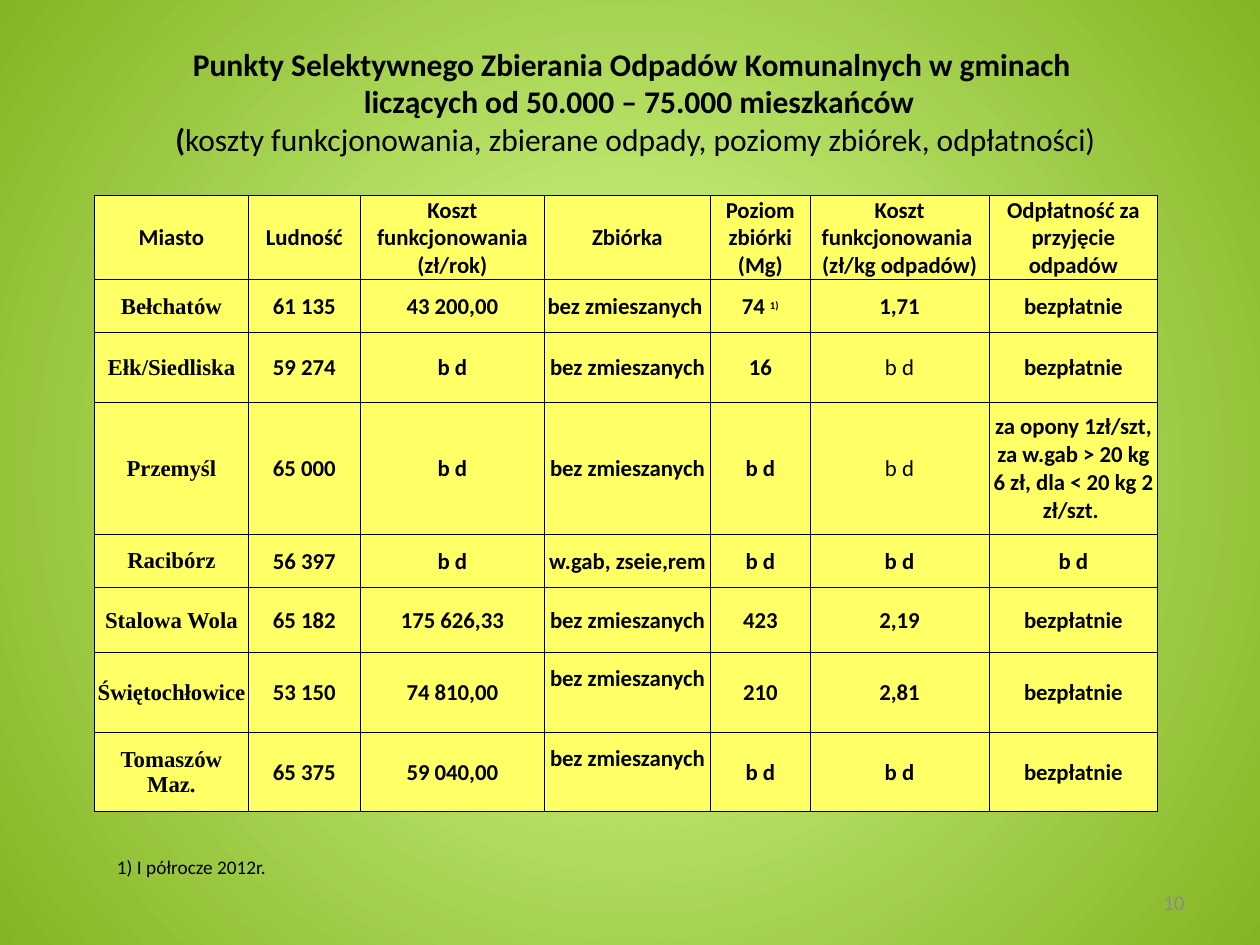
import pptx
import pptx.dml.color
import pptx.enum.text
import pptx.oxml
import pptx.oxml.ns
import pptx.util
from pptx.util import Inches

BLACK = pptx.dml.color.RGBColor(0x00, 0x00, 0x00)
GREY = pptx.dml.color.RGBColor(0x8B, 0x8B, 0x8B)
YELLOW = pptx.dml.color.RGBColor(0xFF, 0xFF, 0x66)
LIGHT_GREEN = pptx.dml.color.RGBColor(0xD9, 0xFF, 0x95)
DARK_GREEN = pptx.dml.color.RGBColor(0x84, 0xB4, 0x23)
ALIGN = pptx.enum.text.PP_ALIGN
MIDDLE = pptx.enum.text.MSO_ANCHOR.MIDDLE
NAMESPACE = pptx.oxml.ns.nsdecls("a")


def set_font(font, size, bold=False, color=BLACK, name="Calibri"):
    font.name = name
    font.size = pptx.util.Pt(size)
    font.bold = bold
    font.color.rgb = color


def add_borders(cell):
    properties = cell._tc.get_or_add_tcPr()
    for position, side in enumerate(("lnL", "lnR", "lnT", "lnB")):
        properties.insert(position, pptx.oxml.parse_xml(
            f'<a:{side} {NAMESPACE} w="6350"><a:solidFill>'
            f'<a:srgbClr val="{BLACK}"/></a:solidFill></a:{side}>'))


deck = pptx.Presentation()
deck.slide_width = Inches(10)
deck.slide_height = Inches(7.5)
page = deck.slides.add_slide(deck.slide_layouts[5])

background = page.background.fill
background.gradient()
for stop, color in zip(background.gradient_stops, (LIGHT_GREEN, DARK_GREEN)):
    stop.color.rgb = color
gradient = page.element.find(".//" + pptx.oxml.ns.qn("a:gradFill"))
gradient.replace(gradient.find(pptx.oxml.ns.qn("a:lin")), pptx.oxml.parse_xml(
    f'<a:path {NAMESPACE} path="circle">'
    '<a:fillToRect l="50000" t="50000" r="50000" b="50000"/></a:path>'))

title = page.shapes.title
title.left, title.top = Inches(0.28), Inches(0.3)
title.width, title.height = Inches(9.53), Inches(1.01)
title.text_frame.auto_size = pptx.enum.text.MSO_AUTO_SIZE.NONE
title.text_frame.vertical_anchor = MIDDLE
para = title.text_frame.paragraphs[0]
para.text = ("Punkty Selektywnego Zbierania Odpadów Komunalnych w gminach \v"
             " liczących od 50.000 – 75.000 mieszkańców\v(")
para.alignment = ALIGN.CENTER
set_font(para.font, 18)
for span in para.runs:
    span.font.bold = True
span = para.add_run()
span.text = "koszty funkcjonowania, zbierane odpady, poziomy zbiórek, odpłatności)"

column_widths = [1.22, 0.89, 1.46, 1.32, 0.79, 1.42, 1.34]
row_heights = [0.67, 0.42, 0.55, 1.05, 0.42, 0.52, 0.63, 0.63]
rows = [
    ["Miasto", "Ludność", "Koszt funkcjonowania\n(zł/rok)", "Zbiórka",
     "Poziom zbiórki (Mg)", "Koszt funkcjonowania \n(zł/kg odpadów)",
     "Odpłatność za przyjęcie odpadów"],
    ["Bełchatów", "61 135", "43 200,00", "bez zmieszanych ", "74 ", "1,71", "bezpłatnie"],
    ["Ełk/Siedliska", "59 274", "b d", "bez zmieszanych", "16", "b d", "bezpłatnie"],
    ["Przemyśl", "65 000", "b d", "bez zmieszanych", "b d", "b d",
     "za opony 1zł/szt, za w.gab > 20 kg 6 zł, dla < 20 kg 2 zł/szt. "],
    ["Racibórz", "56 397", "b d", "w.gab, zseie,rem", "b d", "b d", "b d"],
    ["Stalowa Wola", "65 182", "175 626,33", "bez zmieszanych", "423", "2,19", "bezpłatnie"],
    ["Świętochłowice", "53 150", "74 810,00", "bez zmieszanych", "210", "2,81", "bezpłatnie"],
    ["Tomaszów Maz.", "65 375", "59 040,00", "bez zmieszanych", "b d", "b d", "bezpłatnie"],
]
light_cells = [(2, 5), (3, 5)]
raised_cells = [(6, 3), (7, 3)]

table = page.shapes.add_table(
    len(rows), len(column_widths), Inches(0.75), Inches(1.55),
    Inches(sum(column_widths)), Inches(sum(row_heights))).table
table.first_row = False
table.horz_banding = False
for column, width in zip(table.columns, column_widths):
    column.width = Inches(width)
for row, height in zip(table.rows, row_heights):
    row.height = Inches(height)

for row_index, texts in enumerate(rows):
    for column_index, text in enumerate(texts):
        place = (row_index, column_index)
        cell = table.cell(*place)
        cell.text = text
        cell.vertical_anchor = MIDDLE
        cell.margin_left = cell.margin_right = cell.margin_top = Inches(0.01)
        cell.margin_bottom = Inches(0.22 if place in raised_cells else 0)
        cell.fill.solid()
        cell.fill.fore_color.rgb = YELLOW
        add_borders(cell)
        is_city = column_index == 0 and row_index > 0
        for para in cell.text_frame.paragraphs:
            para.alignment = ALIGN.CENTER
            set_font(para.font, 13, place not in light_cells,
                     name="Times New Roman" if is_city else "Calibri")

note_mark = table.cell(1, 4).text_frame.paragraphs[0].add_run()
note_mark.text = "1)"
note_mark.font.size = pptx.util.Pt(10.5)
note_mark.font._element.set("baseline", "30000")

for text, left, top, width, size, color, alignment in (
        ("1) I półrocze 2012r.", 0.83, 6.74, 8.11, 11, BLACK, ALIGN.LEFT),
        ("10", 7.17, 7.01, 2.33, 12, GREY, ALIGN.RIGHT)):
    box = page.shapes.add_textbox(Inches(left), Inches(top), Inches(width), Inches(0.29))
    box.text_frame.word_wrap = True
    para = box.text_frame.paragraphs[0]
    para.text = text
    para.alignment = alignment
    set_font(para.font, size, color=color)

deck.save("out.pptx")
